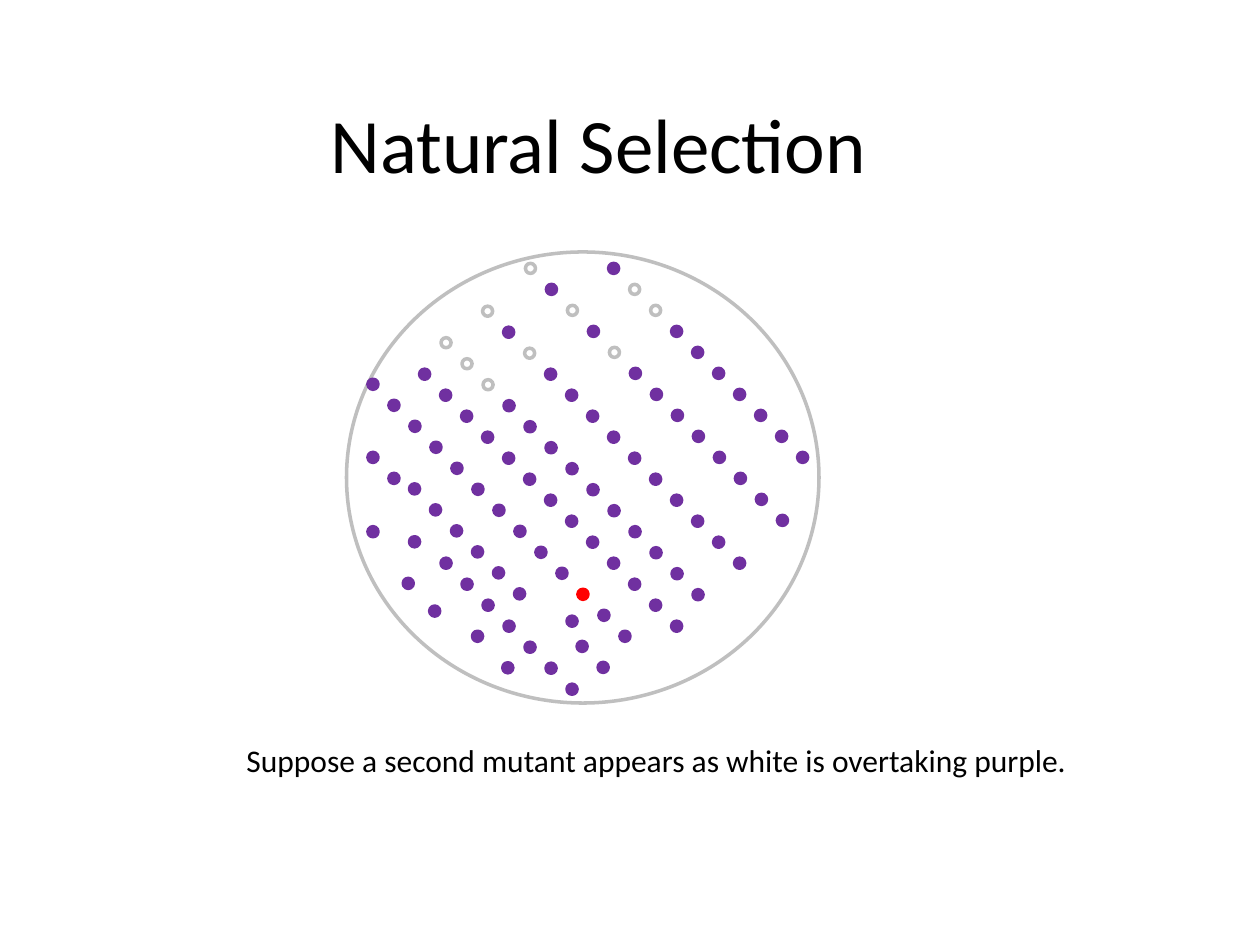
from dataclasses import dataclass

from pptx import Presentation
from pptx.dml.color import RGBColor
from pptx.enum.shapes import MSO_SHAPE
from pptx.enum.text import MSO_ANCHOR, MSO_AUTO_SIZE, PP_ALIGN
from pptx.util import Inches, Pt

OVAL = MSO_SHAPE.OVAL
CENTER = PP_ALIGN.CENTER
MIDDLE = MSO_ANCHOR.MIDDLE
FIT_SHAPE = MSO_AUTO_SIZE.SHAPE_TO_FIT_TEXT


@dataclass(frozen=True)
class Theme:
    font: str = "Calibri"
    title_size: int = 44
    caption_size: int = 18
    line_width: int = 2
    text: str = "000000"
    white: str = "FFFFFF"
    outline: str = "BFBFBF"
    purple: str = "7030A0"
    red: str = "FF0000"


THEME = Theme()

# Fill and line of each kind of individual
KINDS = {
    "P": (THEME.purple, THEME.purple),
    "W": (THEME.white, THEME.outline),
    "R": (THEME.red, THEME.red),
}

DOT = 0.08
STEP = 1 / 6  # each dot in a diagonal is this far right and down

# Diagonals of the population: left and top of the first dot, then the kinds
DIAGONALS = [
    (3.33, 2.93, "P" * 13),
    (3.5, 2.68, "WWW" + "P" * 10),
    (3.83, 2.43, "WPW" + "P" * 10),
    (4.17, 2.09, "WPWPW" + "P" * 8),
    (4.83, 2.09, "PWW" + "P" * 7),
    (3.5, 4.43, "P" * 7),
    (3.75, 4.34, "PPP"),
    (2.92, 3.01, "P" * 10 + "RPP"),
    (3.25, 3.84, "PPP"),
    (4.58, 5.09, "PP"),
    (2.92, 3.59, "PP"),
    # Individuals off the diagonals
    (3.2, 4.59, "P"),
    (3.75, 5.01, "P"),
    (2.92, 4.18, "P"),
    (3.99, 5.26, "P"),
    (3.25, 4.26, "P"),
    (3.41, 4.81, "P"),
    (4.5, 4.89, "P"),
]


def place(sp, left, top, width, height):
    sp.left, sp.top = Inches(left), Inches(top)
    sp.width, sp.height = Inches(width), Inches(height)


def write(tf, text, size):
    tf.word_wrap = True
    p = tf.paragraphs[0]
    p.alignment = CENTER
    r = p.add_run()
    r.text = text
    r.font.name = THEME.font
    r.font.size = Pt(size)
    r.font.color.rgb = RGBColor.from_string(THEME.text)


def add_title(s, text):
    sp = s.shapes.title
    place(sp, 0.5, 0.33, 8.5, 1.61)
    sp.text_frame.vertical_anchor = MIDDLE
    write(sp.text_frame, text, THEME.title_size)


def add_caption(s, text):
    sp = s.shapes.add_textbox(Inches(1.21), Inches(5.83), Inches(8), Inches(0.4))
    write(sp.text_frame, text, THEME.caption_size)
    sp.text_frame.auto_size = FIT_SHAPE


def add_ellipse(s, left, top, width, height, kind):
    fill, line = KINDS[kind]
    sp = s.shapes.add_shape(
        OVAL, Inches(left), Inches(top), Inches(width), Inches(height)
    )
    sp.shadow.inherit = False
    sp.fill.solid()
    sp.fill.fore_color.rgb = RGBColor.from_string(fill)
    sp.line.color.rgb = RGBColor.from_string(line)
    sp.line.width = Pt(THEME.line_width)


def add_diagonal(s, left, top, kinds):
    for i, kind in enumerate(kinds):
        add_ellipse(s, left + i * STEP, top + i * STEP, DOT, DOT, kind)


def main():
    prs = Presentation()
    prs.slide_width, prs.slide_height = Inches(10), Inches(7.5)
    s = prs.slides.add_slide(prs.slide_layouts[0])

    # Title; the subtitle is not needed
    add_title(s, "Natural Selection")
    subtitle = s.placeholders[1].element
    subtitle.getparent().remove(subtitle)

    # Habitat and its population
    add_ellipse(s, 2.75, 2, 3.75, 3.58, "W")
    for left, top, kinds in DIAGONALS:
        add_diagonal(s, left, top, kinds)

    # Caption
    add_caption(s, "Suppose a second mutant appears as white is overtaking purple.")

    prs.save("out.pptx")


if __name__ == "__main__":
    main()
